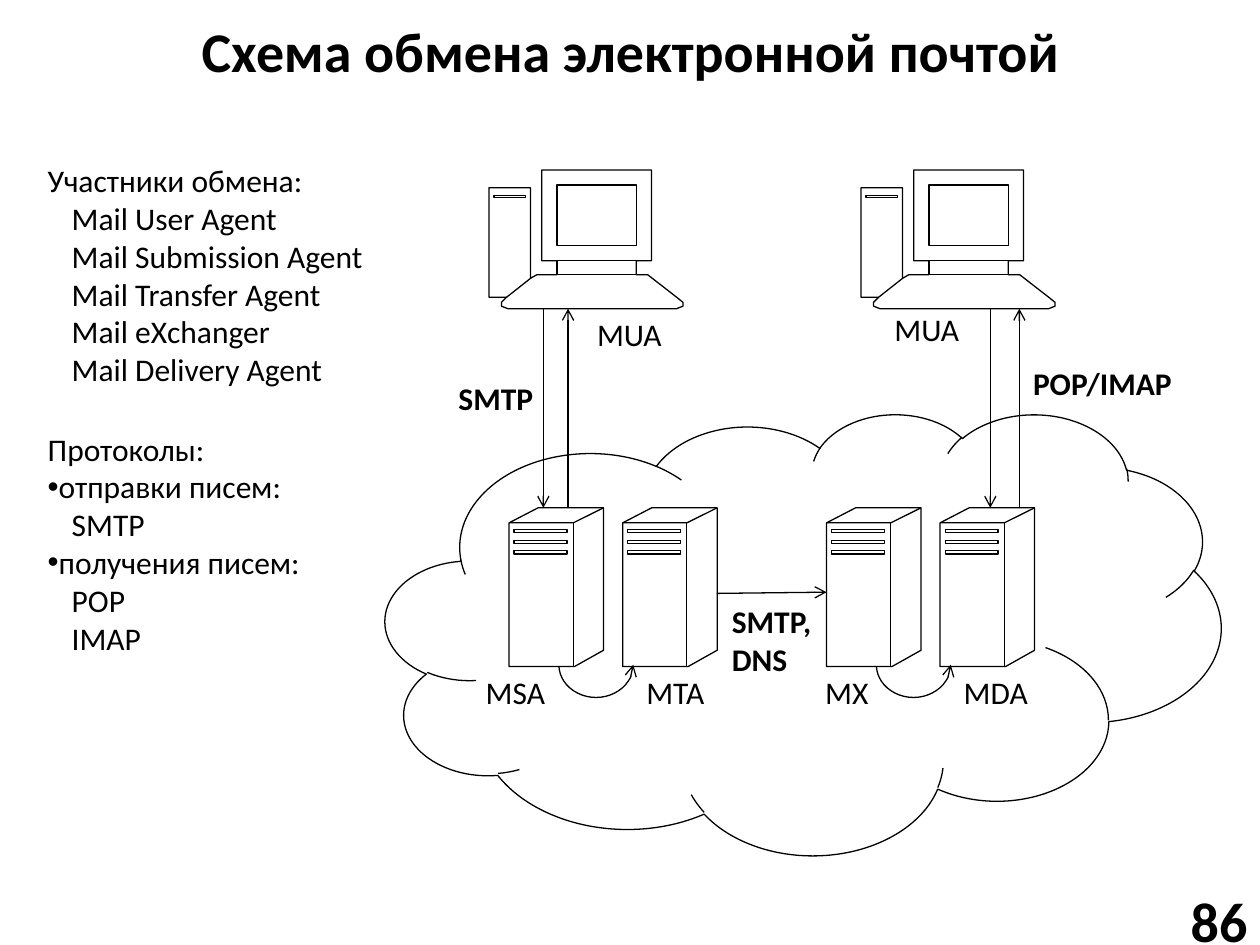
from dataclasses import dataclass

from pptx import Presentation, util as u
from pptx.dml.color import RGBColor
from pptx.enum import shapes, text
from pptx.oxml.ns import qn
from lxml import etree


@dataclass(frozen=True)
class Theme:
    font: str = "Calibri"
    ink: RGBColor = RGBColor(0, 0, 0)
    paper: RGBColor = RGBColor(255, 255, 255)
    heading_size: int = 32
    body_size: int = 18
    line_width: float = 0.75
    indent: float = 13.7


def apply(target, values):
    for name, value in values.items():
        setattr(target, name, value)


def rectangle(left, top, right, bottom):
    return [(left, top), (right, top), (right, bottom), (left, bottom), (left, top)]


class Diagram:
    """Draws on one slide in one style; all lengths are points."""

    def __init__(self, slide, theme):
        self.slide, self.theme = slide, theme

    def fill_text(self, shape, paragraphs, size, bold=False, align=None,
                  anchor=text.MSO_ANCHOR.TOP):
        """Fill a shape with (kind, wording) paragraphs."""
        frame = shape.text_frame
        apply(frame, {"word_wrap": True, "vertical_anchor": anchor,
                      "auto_size": text.MSO_AUTO_SIZE.NONE})
        for index, (kind, wording) in enumerate(paragraphs):
            paragraph = frame.add_paragraph() if index else frame.paragraphs[0]
            paragraph.alignment = align
            run = paragraph.add_run()
            run.text = wording
            apply(run.font, {"name": self.theme.font, "size": u.Pt(size), "bold": bold})
            run.font.color.rgb = self.theme.ink
            properties = paragraph._p.get_or_add_pPr()
            if kind == "indented":
                properties.set("marL", str(u.Pt(self.theme.indent)))
            elif kind == "bullet":
                etree.SubElement(properties, qn("a:buFont")).set("typeface", "Arial")
                etree.SubElement(properties, qn("a:buChar")).set("char", "•")

    def title(self, box, wording):
        shape = self.slide.shapes.title
        apply(shape, dict(zip(("left", "top", "width", "height"), map(u.Pt, box))))
        self.fill_text(shape, [("plain", wording)], self.theme.heading_size, True,
                       text.PP_ALIGN.CENTER, text.MSO_ANCHOR.MIDDLE)

    def text_box(self, box, paragraphs, size=None, **style):
        shape = self.slide.shapes.add_textbox(*map(u.Pt, box))
        self.fill_text(shape, paragraphs, size or self.theme.body_size, **style)

    def outline(self, shape, head=None, tail=None):
        shape.line.color.rgb = self.theme.ink
        shape.line.width = u.Pt(self.theme.line_width)
        line = shape.element.spPr.find(qn("a:ln"))
        for tag, arrow in (("a:headEnd", head), ("a:tailEnd", tail)):
            if arrow:
                etree.SubElement(line, qn(tag)).set("type", arrow)

    def preset(self, kind, box, rotation=0, adjustments=(), head=None):
        shape = self.slide.shapes.add_shape(kind, *map(u.Pt, box))
        shape.rotation = rotation
        for index, value in enumerate(adjustments):
            shape.adjustments[index] = value
        shape.fill.background()
        self.outline(shape, head=head)
        shape.shadow.inherit = False

    def drawing(self, left, top, contours):
        """One filled freeform; contours are relative to its top left corner."""
        # The builder keeps whole units only, so one unit is a tenth of a point
        tenths = [[(x * 10, y * 10) for x, y in contour] for contour in contours]
        builder = self.slide.shapes.build_freeform(*tenths[0][0], scale=u.Pt(0.1))
        for index, (start, *others) in enumerate(tenths):
            if index:
                builder.move_to(*start)
            builder.add_line_segments(others, close=False)
        shape = builder.convert_to_shape(u.Pt(left), u.Pt(top))
        shape.fill.solid()
        shape.fill.fore_color.rgb = self.theme.paper
        self.outline(shape)
        shape.shadow.inherit = False

    def arrow(self, start, end):
        shape = self.slide.shapes.add_connector(
            shapes.MSO_CONNECTOR.STRAIGHT, *map(u.Pt, (*start, *end)))
        self.outline(shape, tail="arrow")
        etree.SubElement(shape.element.spPr, qn("a:effectLst"))


COMPUTER = [
    # Tower, monitor and keyboard
    [(0, 72.7), (0, 10.1), (23.8, 10.1), (23.8, 61.9), (27.4, 59.8), (38.9, 59.8),
     (38.9, 51.8), (30.2, 51.8), (30.2, 0), (92.9, 0), (92.9, 51.8), (84.2, 51.8),
     (84.2, 59.8), (90.7, 59.8), (107.3, 72.7), (110.9, 75.6), (110.9, 77.8),
     (107.3, 79.2), (10.8, 79.2), (7.2, 77.8), (7.2, 75.6), (10.1, 72.7), (0, 72.7)],
    [(23.8, 61.9), (10.1, 72.7)],
    # Screen, stand and drive
    rectangle(38.9, 8.6, 84.2, 43.2),
    rectangle(38.9, 51.8, 84.2, 59.8),
    rectangle(2.9, 14.4, 20.9, 15.8),
]
SERVER = [
    [(0, 8.6), (16.6, 0), (54, 0), (54, 81.4), (37.4, 90.7), (0, 90.7), (0, 8.6)],
    [(0, 8.6), (36.7, 8.6), (54, 0)],
    [(36.7, 8.6), (36.7, 90.7)],
    *(rectangle(2.9, top, 33.1, top + 1.8) for top in (12.4, 18.5, 24.6)),
]


def main():
    presentation = Presentation()
    apply(presentation, {"slide_width": u.Pt(720), "slide_height": u.Pt(540)})
    theme = Theme()
    slide = presentation.slides.add_slide(presentation.slide_layouts[5])
    diagram = Diagram(slide, theme)

    # Network cloud, title and page number
    diagram.preset(shapes.MSO_SHAPE.CLOUD, (220.3, 236.2, 477.4, 252))
    diagram.title((20.2, 3.6, 680.4, 49.7), "Схема обмена электронной почтой")
    diagram.text_box((638, 511.2, 82, 28.8), [("plain", "86")], theme.heading_size,
                     bold=True, align=text.PP_ALIGN.RIGHT,
                     anchor=text.MSO_ANCHOR.MIDDLE)

    # Computers and two pairs of servers
    computer_top, server_top = 97.2, 290.2
    computer_bottom = computer_top + 79.2
    for left in (279.4, 492):
        diagram.drawing(left, computer_top, COMPUTER)
    for left in (290.9, 472.3):
        for offset in (0, 64.9):
            diagram.drawing(left + offset, server_top, SERVER)
        # Hand-over inside the pair
        diagram.preset(shapes.MSO_SHAPE.ARC, (left + 31, 358.6, 37.4, 42.5), 90,
                       (162, 52.01), head="arrow")

    # Exchange between computers and servers
    for down, up in ((310.5, 324.6), (565.9, 582.5)):
        diagram.arrow((down, computer_bottom), (down, server_top))
        diagram.arrow((up, server_top), (up, computer_bottom))
    diagram.arrow((409.7, 339.1), (472.3, 338.4))

    # Node labels
    label_top = 380.9
    for wording, left, top, width, align in (
            ("MUA", 334.1, 176.4, 54, None),
            ("MUA", 504, 173.5, 54, None),
            ("MSA", 269.3, label_top, 50.4, text.PP_ALIGN.CENTER),
            ("MTA", 362.2, label_top, 54, None),
            ("MX", 464.4, label_top, 42.5, None),
            ("MDA", 543.6, label_top, 54, None)):
        diagram.text_box((left, top, width, 28.8), [("plain", wording)], align=align)

    # Participants and protocols
    agents = ("Mail User Agent", "Mail Submission Agent", "Mail Transfer Agent",
              "Mail eXchanger", "Mail Delivery Agent")
    participants = [("plain", "Участники обмена:"),
                    *(("indented", agent) for agent in agents)]
    protocols = [("plain", "Протоколы:"),
                 ("bullet", "отправки писем:"), ("indented", "SMTP"),
                 ("bullet", "получения писем:"), ("indented", "POP"),
                 ("indented", "IMAP")]
    for top, paragraphs in ((88.6, participants), (241.9, protocols)):
        diagram.text_box((20.2, top, 221, 138.2), paragraphs)

    # Protocol labels
    for box, lines in (((254.9, 213.1, 62.6, 28.8), ["SMTP"]),
                       ((583.2, 204.5, 99.4, 28.8), ["POP/IMAP"]),
                       ((411.1, 340.6, 62.6, 51.1), ["SMTP,", "DNS"])):
        diagram.text_box(box, [("plain", line) for line in lines], bold=True)

    presentation.save("out.pptx")


if __name__ == "__main__":
    main()
